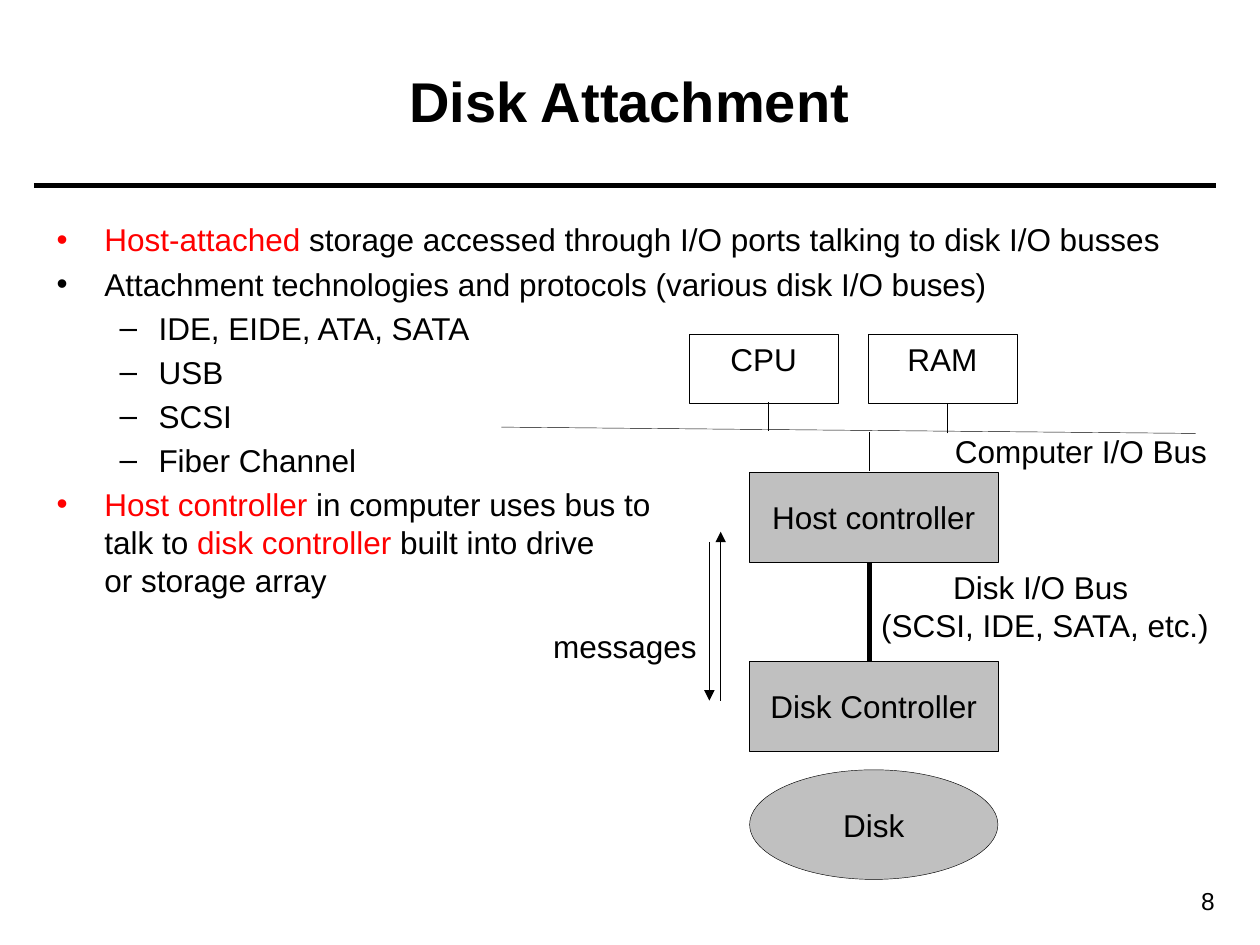
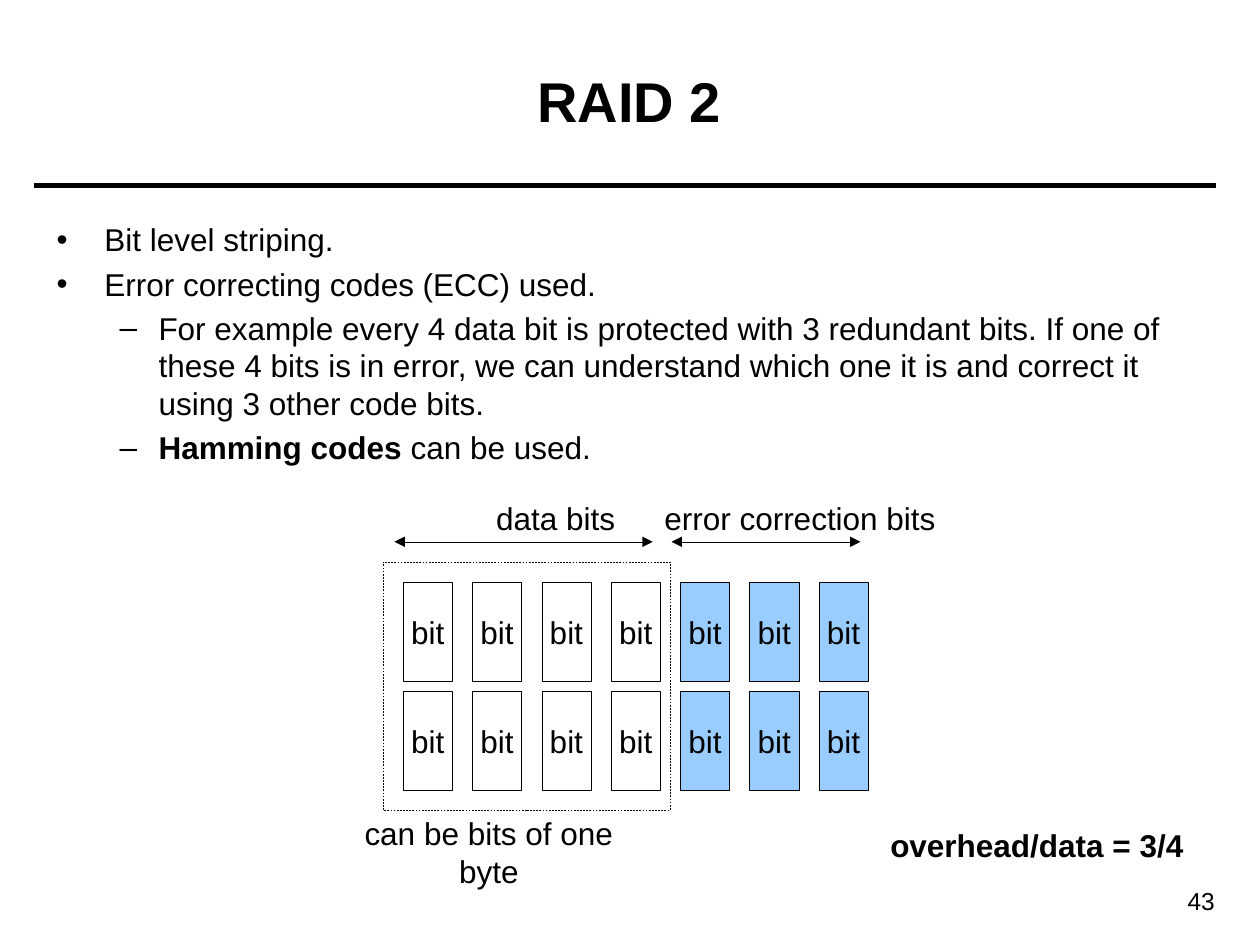
from collections import namedtuple

from lxml.etree import SubElement
from pptx import Presentation
from pptx.dml.color import RGBColor
from pptx.enum.dml import MSO_LINE
from pptx.enum.shapes import MSO_CONNECTOR, MSO_SHAPE
from pptx.enum.text import MSO_ANCHOR, PP_ALIGN
from pptx.oxml.ns import qn
from pptx.util import Inches, Pt

WIDTH, HEIGHT = Inches(10), Inches(7.5)
COLUMNS, ROWS = 100, 75

BLACK = RGBColor(0x00, 0x00, 0x00)
RED = RGBColor(0xFF, 0x00, 0x00)
GREY = RGBColor(0xC0, 0xC0, 0xC0)
LIGHT_BLUE = RGBColor(0x99, 0xCC, 0xFF)

FONT = "Arial"
TITLE_SIZE, TEXT_SIZE, NUMBER_SIZE = 32, 18, 14
THIN, THICK = 0.25, 3
BULLETS = [("•", 0.38, 0.38), ("–", 0.81, 0.31)]

Span = namedtuple("Span", "text color bold", defaults=(BLACK, False))


def col(n):
    return int(WIDTH * n / COLUMNS)


def row(n):
    return int(HEIGHT * n / ROWS)


def area(left, top, width, height):
    return col(left), row(top), col(width), row(height)


def set_font(paragraph, size=TEXT_SIZE, bold=False):
    font = paragraph.font
    font.name, font.size, font.bold = FONT, Pt(size), bold
    font.color.rgb = BLACK


def write(frame, text, size=TEXT_SIZE, bold=False, align=PP_ALIGN.CENTER,
          anchor=MSO_ANCHOR.TOP, wrap=False):
    frame.word_wrap = wrap
    frame.vertical_anchor = anchor
    paragraph = frame.paragraphs[0]
    paragraph.text = text
    paragraph.alignment = align
    set_font(paragraph, size, bold)


def add_label(slide, place, text, **style):
    label = slide.shapes.add_textbox(*area(*place))
    write(label.text_frame, text, **style)


def add_block(slide, place, text="", fill=None, kind=MSO_SHAPE.RECTANGLE,
              anchor=MSO_ANCHOR.MIDDLE, dash=None):
    block = slide.shapes.add_shape(kind, *area(*place))
    block.shadow.inherit = False
    if fill is None:
        block.fill.background()
    else:
        block.fill.solid()
        block.fill.fore_color.rgb = fill
    block.line.color.rgb = BLACK
    block.line.width = Pt(THIN)
    if dash:
        block.line.dash_style = dash
    if text:
        write(block.text_frame, text, anchor=anchor)


def add_line(slide, start, end, weight=THIN, arrows=()):
    line = slide.shapes.add_connector(
        MSO_CONNECTOR.STRAIGHT,
        col(start[0]), row(start[1]), col(end[0]), row(end[1]))
    line.line.color.rgb = BLACK
    line.line.width = Pt(weight)
    outline = line.line._get_or_add_ln()
    for arrow in arrows:
        SubElement(outline, qn(f"a:{arrow}"), type="triangle")
    SubElement(line._element.spPr, qn("a:effectLst"))


def add_span(paragraph, span):
    for index, text in enumerate(span.text.split("\n")):
        if index:
            paragraph.add_line_break()
        run = paragraph.add_run()
        run.text = text
        if span.color != BLACK:
            run.font.color.rgb = span.color
        if span.bold:
            run.font.bold = True


def add_bullets(slide, height, points):
    frame = slide.shapes.add_textbox(*area(3.5, 17, 92.9, height)).text_frame
    frame.word_wrap = True
    for index, (level, *spans) in enumerate(points):
        paragraph = frame.add_paragraph() if index else frame.paragraphs[0]
        paragraph.level = level
        paragraph.space_before = Pt(TEXT_SIZE * 0.2)
        set_font(paragraph)
        mark, indent, hanging = BULLETS[level]
        properties = paragraph._p.get_or_add_pPr()
        properties.set("marL", str(Inches(indent)))
        properties.set("indent", str(-Inches(hanging)))
        defaults = properties.find(qn("a:defRPr"))
        for tag, values in (("a:buFont", {"typeface": FONT}), ("a:buChar", {"char": mark})):
            defaults.addprevious(properties.makeelement(qn(tag), values))
        for span in spans:
            add_span(paragraph, span)


def start_slide(deck, title, number):
    slide = deck.slides.add_slide(deck.slide_layouts[5])
    heading = slide.shapes.title
    heading.left, heading.top, heading.width, heading.height = area(3.5, 1.7, 92.9, 12.5)
    write(heading.text_frame, title, size=TITLE_SIZE, bold=True,
          anchor=MSO_ANCHOR.MIDDLE, wrap=True)
    add_line(slide, (2.7, 14.7), (96.5, 14.7), THICK)
    add_label(slide, (87, 69.8, 10.4, 3.4), number, size=NUMBER_SIZE,
              align=PP_ALIGN.RIGHT, wrap=True)
    return slide


def build_disk_attachment(deck):
    slide = start_slide(deck, "Disk Attachment", "8")
    add_bullets(slide, 51.2, [
        (0, Span("Host-attached", RED),
         Span(" storage accessed through I/O ports talking to disk I/O busses")),
        (0, Span("Attachment technologies and protocols (various disk I/O buses)")),
        (1, Span("IDE, EIDE, ATA, SATA")),
        (1, Span("USB")),
        (1, Span("SCSI")),
        (1, Span("Fiber Channel")),
        (0, Span("Host controller", RED),
         Span(" in computer uses bus to \ntalk to "),
         Span("disk controller", RED),
         Span(" built into drive \nor storage array")),
    ])

    for left, unit in ((54.7, "CPU"), (68.9, "RAM")):
        add_block(slide, (left, 26.5, 11.8, 5.5), unit, anchor=MSO_ANCHOR.TOP)
    add_line(slide, (61, 34.2), (61, 31.9))
    add_line(slide, (75.2, 34.4), (75.2, 32))
    add_line(slide, (39.8, 33.9), (94.9, 34.4))
    add_line(slide, (69, 34.3), (69, 37.4))
    add_label(slide, (74.3, 33.8, 23, 4), "Computer I/O Bus")

    for top, controller in ((37.5, "Host controller"), (52.5, "Disk Controller")):
        add_block(slide, (59.5, top, 19.7, 7.1), controller, GREY)
    add_line(slide, (69, 44.6), (69, 52.5), THICK)
    add_label(slide, (68.3, 44.6, 29.3, 7.1), "Disk I/O Bus \v(SCSI, IDE, SATA, etc.)")
    add_block(slide, (59.5, 61.1, 19.7, 8.7), "Disk", GREY, MSO_SHAPE.OVAL)

    add_line(slide, (56.3, 43), (56.3, 55.6), arrows=["tailEnd"])
    add_line(slide, (57.2, 55.6), (57.2, 42.2), arrows=["tailEnd"])
    add_label(slide, (42.4, 49.3, 14.4, 4), "messages")


def build_raid_2(deck):
    slide = start_slide(deck, "RAID 2", "43")
    add_bullets(slide, 25.2, [
        (0, Span("Bit level striping.")),
        (0, Span("Error correcting codes (ECC) used.")),
        (1, Span("For example every 4 data bit is protected with 3 redundant bits. "
                 "If one of these 4 bits is in error, we can understand which one "
                 "it is and correct it using 3 other code bits.")),
        (1, Span("Hamming codes", bold=True), Span(" can be used.")),
    ])

    data_bits, code_bits = 4, 3
    for stripe in range(2):
        for bit in range(data_bits + code_bits):
            add_block(slide, (32 + 5.5 * bit, 46.2 + 8.65 * stripe, 3.9, 7.9),
                      "bit", LIGHT_BLUE if bit >= data_bits else None)
    add_block(slide, (30.4, 44.6, 22.8, 19.7), dash=MSO_LINE.DASH)

    for left, right in ((31.3, 51.8), (53.3, 68.3)):
        add_line(slide, (left, 43), (right, 43), arrows=["headEnd", "tailEnd"])
    add_label(slide, (37.1, 39.1, 14, 4), "data bits")
    add_label(slide, (51, 39.1, 25, 4), "error correction bits")
    add_label(slide, (27.3, 64.1, 23, 7), "can be bits of one byte", wrap=True)
    add_label(slide, (68.3, 65.1, 28, 4), "overhead/data = 3/4", bold=True)


def main():
    deck = Presentation()
    deck.slide_width, deck.slide_height = WIDTH, HEIGHT
    build_disk_attachment(deck)
    build_raid_2(deck)
    deck.save("out.pptx")


if __name__ == "__main__":
    main()
